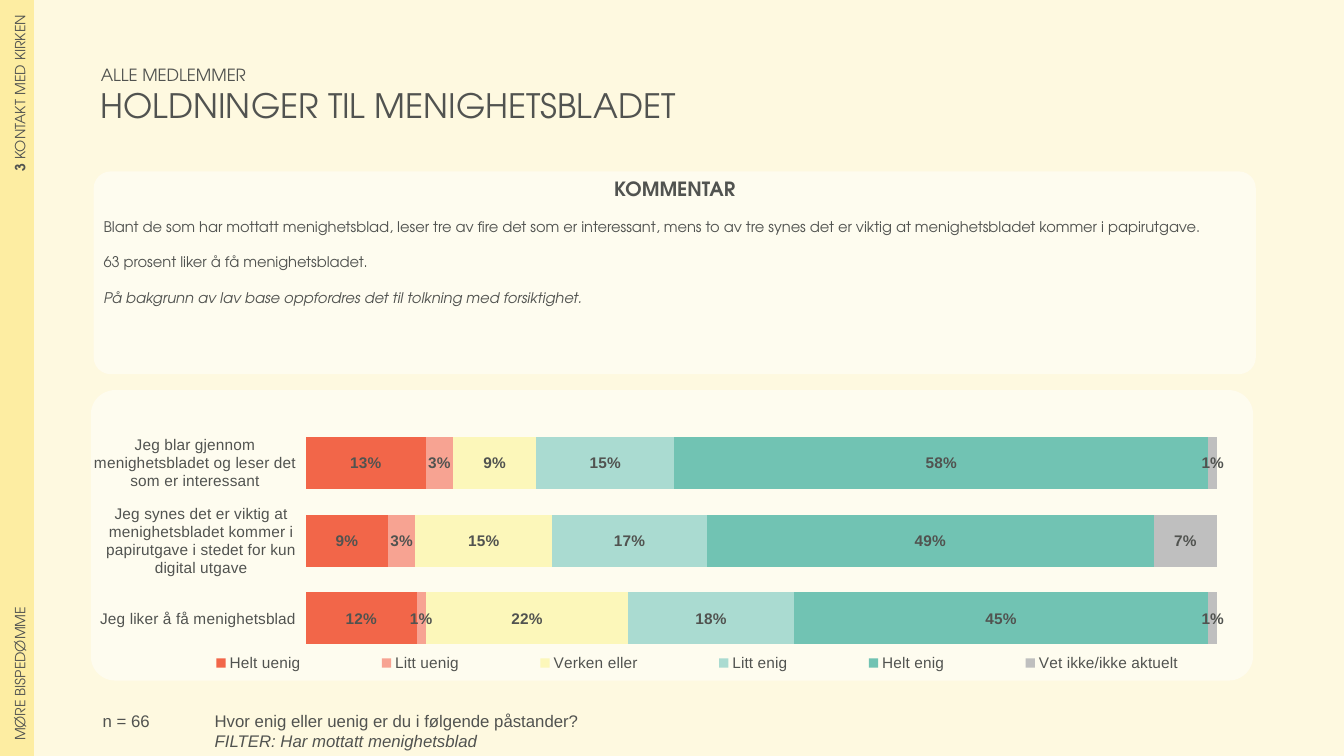
from dataclasses import dataclass

from lxml.etree import SubElement
from pptx import Presentation
from pptx.chart.data import CategoryChartData
from pptx.dml.color import RGBColor
from pptx.enum.chart import XL_CHART_TYPE, XL_LEGEND_POSITION, XL_TICK_MARK
from pptx.enum.shapes import MSO_SHAPE
from pptx.enum.text import MSO_ANCHOR, PP_ALIGN
from pptx.oxml import parse_xml
from pptx.oxml.ns import nsdecls, qn
from pptx.util import Cm, Pt


@dataclass(frozen=True)
class Theme:
    background: str = "FEF9E0"
    sidebar: str = "FDEDA2"
    panel: str = "FFFFFF"
    text: str = "515350"
    heading_font: str = "TeX Gyre Adventor"
    body_font: str = "Arial"
    title_size: float = 24
    heading_size: float = 14
    note_size: float = 12
    chart_size: float = 11
    comment_size: float = 10.5
    sidebar_size: float = 10


@dataclass(frozen=True)
class Box:
    """A rectangle in centimetres."""
    left: float
    top: float
    width: float
    height: float

    def lengths(self):
        return Cm(self.left), Cm(self.top), Cm(self.width), Cm(self.height)

    def inset(self, left=0, top=0, right=0, bottom=0):
        return Box(self.left + left, self.top + top,
                   self.width - left - right, self.height - top - bottom)


THEME = Theme()
NO_TABLE_STYLE = "{2D5ABB26-0587-4C30-8999-92F81FD0307C}"

CATEGORIES = (
    "Jeg liker å få menighetsblad",
    "Jeg synes det er viktig at menighetsbladet kommer i papirutgave i stedet for kun digital utgave",
    "Jeg blar gjennom menighetsbladet og leser det som er interessant",
)
ANSWERS = (
    ("Helt uenig", "F26649", (0.12, 0.09, 0.13)),
    ("Litt uenig", "F7A392", (0.01, 0.03, 0.03)),
    ("Verken eller", "FCF7BA", (0.22, 0.15, 0.09)),
    ("Litt enig", "AADBD1", (0.18, 0.17, 0.15)),
    ("Helt enig", "71C3B3", (0.45, 0.49, 0.58)),
    ("Vet ikke/ikke aktuelt", "BFBFBF", (0.01, 0.07, 0.01)),
)


def paint(fill, color):
    fill.solid()
    fill.fore_color.rgb = RGBColor.from_string(color)


def style_font(font, size, name, bold=False, italic=False):
    font.size = Pt(size)
    font.name = name
    font.bold = bold
    font.italic = italic
    font.color.rgb = RGBColor.from_string(THEME.text)


def add_run(paragraph, text, size, name=THEME.heading_font, bold=False, italic=False):
    run = paragraph.add_run()
    run.text = text
    style_font(run.font, size, name, bold, italic)


def add_text_frame(slide, box):
    frame = slide.shapes.add_textbox(*box.lengths()).text_frame
    frame.word_wrap = True
    return frame


def add_sidebar(slide, box):
    table_shape = slide.shapes.add_table(2, 1, *box.lengths())
    table = table_shape.table
    table.first_row = table.horz_banding = False
    table_shape._element.find(".//" + qn("a:tableStyleId")).text = NO_TABLE_STYLE
    entries = (
        (PP_ALIGN.RIGHT, (("3", True), (" KONTAKT MED KIRKEN", False))),
        (PP_ALIGN.LEFT, (("MØRE BISPEDØMME", False),)),
    )
    for row, (alignment, runs) in enumerate(entries):
        cell = table.cell(row, 0)
        paint(cell.fill, THEME.sidebar)
        cell.vertical_anchor = MSO_ANCHOR.MIDDLE
        cell.margin_left = cell.margin_right = Cm(0.38)
        cell.margin_top = cell.margin_bottom = Cm(0.38)
        cell._tc.get_or_add_tcPr().set("vert", "vert270")
        paragraph = cell.text_frame.paragraphs[0]
        paragraph.alignment = alignment
        for text, bold in runs:
            add_run(paragraph, text, THEME.sidebar_size, bold=bold)


def add_title(slide, box):
    frame = add_text_frame(slide, box)
    frame.vertical_anchor = MSO_ANCHOR.MIDDLE
    add_run(frame.paragraphs[0], "ALLE MEDLEMMER", THEME.note_size)
    add_run(frame.add_paragraph(), "HOLDNINGER TIL MENIGHETSBLADET", THEME.title_size)


def add_panel(slide, box):
    panel = slide.shapes.add_shape(MSO_SHAPE.ROUNDED_RECTANGLE, *box.lengths())
    panel.adjustments[0] = 0.084
    panel.shadow.inherit = False
    panel.line.fill.background()
    paint(panel.fill, THEME.panel)
    color = panel._element.spPr.find(qn("a:solidFill"))[0]
    SubElement(color, qn("a:alpha")).set("val", "50000")


def add_comment(slide, box):
    add_panel(slide, box)
    frame = add_text_frame(slide, box.inset(top=0.02, bottom=1.5))
    heading = frame.paragraphs[0]
    heading.alignment = PP_ALIGN.CENTER
    add_run(heading, "KOMMENTAR", THEME.heading_size, bold=True)
    comments = (
        ("Blant de som har mottatt menighetsblad, leser tre av fire det som er interessant, "
         "mens to av tre synes det er viktig at menighetsbladet kommer i papirutgave.", False),
        ("63 prosent liker å få menighetsbladet.", False),
        ("På bakgrunn av lav base oppfordres det til tolkning med forsiktighet.", True),
    )
    for text, italic in comments:
        paragraph = frame.add_paragraph()
        paragraph.space_before = Pt(12.5)
        add_run(paragraph, text, THEME.comment_size, italic=italic)


def set_layout(parent, index, left, top, width, height, target=""):
    """Place a chart part by fractions of the chart area."""
    for layout in parent.findall(qn("c:layout")):
        parent.remove(layout)
    target_xml = f'<c:layoutTarget val="{target}"/>' if target else ""
    parent.insert(index, parse_xml(
        f'<c:layout {nsdecls("c")}><c:manualLayout>{target_xml}'
        '<c:xMode val="edge"/><c:yMode val="edge"/>'
        f'<c:x val="{left}"/><c:y val="{top}"/><c:w val="{width}"/><c:h val="{height}"/>'
        '</c:manualLayout></c:layout>'))


def add_answers(slide, box):
    add_panel(slide, box)
    data = CategoryChartData(number_format="0%")
    data.categories = CATEGORIES
    for name, _, values in ANSWERS:
        data.add_series(name, values)
    chart = slide.shapes.add_chart(XL_CHART_TYPE.BAR_STACKED_100,
                                   *box.inset(left=0.07, right=-0.04).lengths(), data).chart
    style_font(chart.font, THEME.chart_size, THEME.body_font)
    chart.has_title = False

    category_axis = chart.category_axis
    category_axis.format.line.fill.background()
    category_axis.major_tick_mark = XL_TICK_MARK.OUTSIDE
    style_font(category_axis.tick_labels.font, THEME.chart_size, THEME.body_font)
    value_axis = chart.value_axis
    value_axis.minimum_scale, value_axis.maximum_scale = 0, 1
    value_axis.has_major_gridlines = False
    value_axis.visible = False

    plot = chart.plots[0]
    plot.gap_width, plot.overlap = 50, 100
    plot.vary_by_categories = False
    for series, (_, color, _) in zip(plot.series, ANSWERS):
        paint(series.format.fill, color)
        labels = series.data_labels
        labels.show_value = True
        labels.number_format = "0%"
        labels.number_format_is_linked = False
        style_font(labels.font, THEME.chart_size, THEME.body_font, bold=True)

    chart.has_legend = True
    legend = chart.legend
    legend.position = XL_LEGEND_POSITION.RIGHT
    legend.include_in_layout = False
    style_font(legend.font, THEME.chart_size, THEME.body_font)
    set_layout(legend._element, 1, 0.04, 0.9, 0.96, 0.08)
    set_layout(plot._element.getparent(), 0, 0.183, 0.117, 0.785, 0.803, "inner")


def add_footer(slide, box):
    question = add_text_frame(slide, box.inset(left=2.82))
    add_run(question.paragraphs[0], "Hvor enig eller uenig er du i følgende påstander?",
            THEME.note_size, THEME.body_font)
    add_run(question.add_paragraph(), "FILTER: Har mottatt menighetsblad",
            THEME.note_size, THEME.body_font, italic=True)
    base = add_text_frame(slide, Box(box.left, box.top, 3.63, box.height))
    add_run(base.paragraphs[0], "n = 66", THEME.note_size, THEME.body_font)


def main():
    presentation = Presentation()
    presentation.slide_width, presentation.slide_height = Cm(33.87), Cm(19.05)
    slide = presentation.slides.add_slide(presentation.slide_layouts[6])
    paint(slide.background.fill, THEME.background)
    add_sidebar(slide, Box(0, 0, 0.86, 19.05))
    add_title(slide, Box(2.29, 1.5, 26.8, 1.8))
    add_comment(slide, Box(2.36, 4.32, 29.29, 5.11))
    add_answers(slide, Box(2.29, 9.83, 29.29, 7.32))
    add_footer(slide, Box(2.34, 17.78, 29.21, 0.69))
    presentation.save("out.pptx")


if __name__ == "__main__":
    main()
